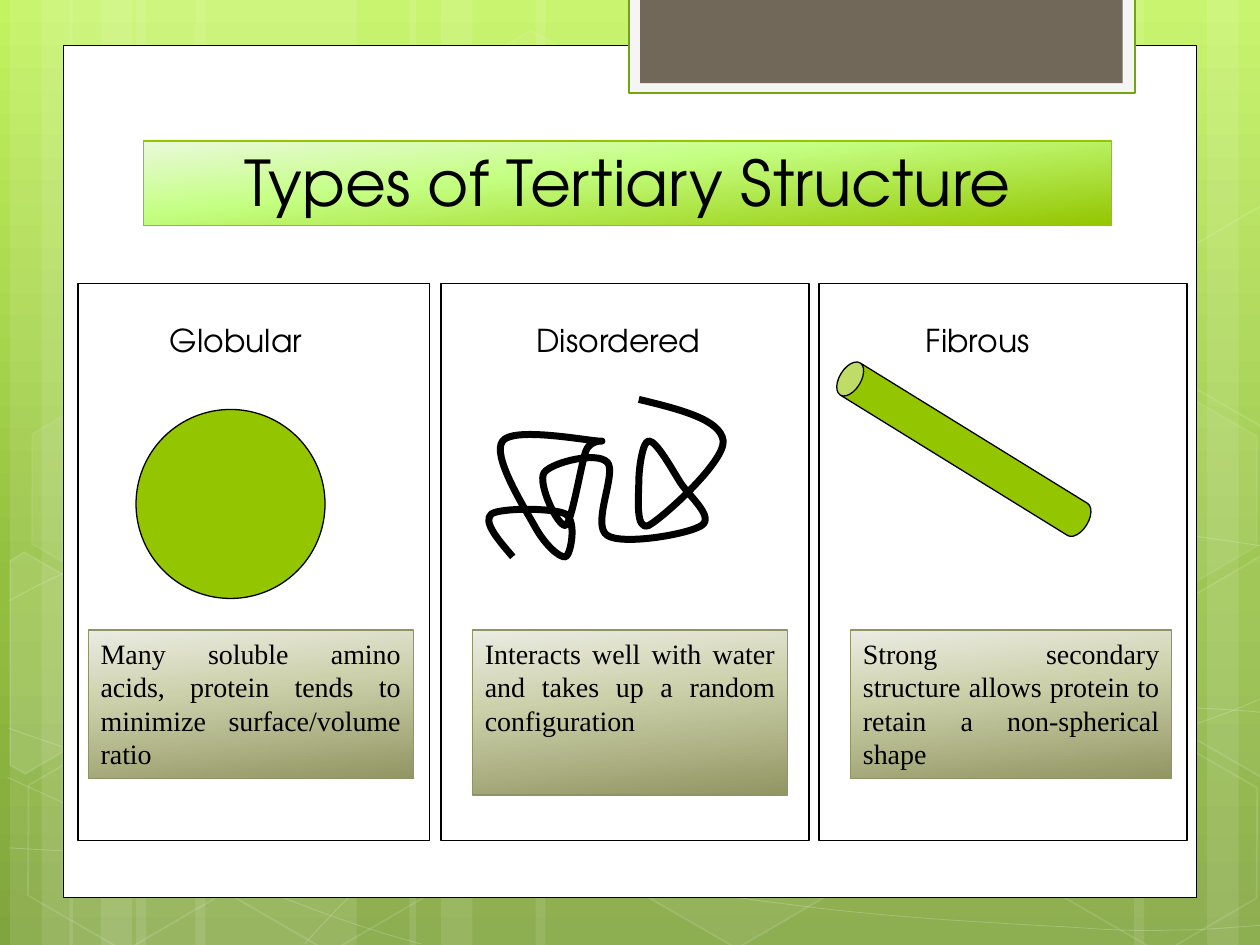
import math

import pptx
import pptx.util
from lxml import etree
from pptx.dml.color import RGBColor
from pptx.enum.shapes import MSO_SHAPE
from pptx.enum.text import MSO_ANCHOR, PP_ALIGN
from pptx.oxml.ns import qn
from pptx.util import Inches

COLORS = {
    "white": "FFFFFF", "black": "000000", "green": "94C600",
    "tab": "F5F5F5", "tab_line": "74A510", "tab_fill": "71685A",
    "note_line": "909465",
}
BACKDROP = [(0, "C3F35F"), (62, "93BF3F"), (100, "81A53E")]
TITLE_FILL = [(0, "EAF9DA"), (40, "C4FF82"), (100, "94C600")]
NOTE_FILL = [(0, "EBECE3"), (40, "CDD1AB"), (100, "929663")]
HEADING_FONT = "TeX Gyre Adventor"
NOTE_FONT = "Times New Roman"

STRIPES = [
    (1.08, 1.75, 0), (0.08, 0.5, 0), (0.33, 0.83, 0), (1.55, 1.75, 0), (0.55, 0.5, 0), (0.8, 0.83, 0),
    (7.33, 1.75, 180), (9.58, 0.5, 180), (9, 0.83, 180), (4.25, 3.08, 0), (3.25, 0.5, 0), (3.5, 0.83, 0),
]
WAVES = [
    [(0.07, 6.73), (0.61, 6.76), (1.15, 6.79), (1.9, 6.78), (2.65, 6.77), (3.58, 6.75),
     (4.58, 6.65), (5.58, 6.55), (7, 6.36), (7.92, 6.17), (8.83, 5.98), (9.77, 5.68), (10.07, 5.51)],
    [(0.07, 4.77), (0.36, 4.61), (0.65, 4.46), (1.21, 4.31), (1.78, 4.16), (2.59, 3.94),
     (3.47, 3.87), (4.36, 3.8), (5.44, 3.79), (6.54, 3.87), (7.64, 3.95), (9.47, 4.26), (10.07, 4.34)],
    [(0.06, 6.17), (1.27, 6.72), (2.47, 7.27), (3.34, 7.49)],
    [(0.07, 5.78), (0.38, 5.89), (0.7, 6), (1.28, 6.16), (1.86, 6.31), (2.73, 6.56),
     (3.57, 6.73), (4.4, 6.9), (5.45, 7.08), (6.28, 7.18), (7.11, 7.29), (8, 7.33),
     (8.53, 7.36), (9.05, 7.4), (9.19, 7.38), (9.45, 7.38), (9.71, 7.37), (9.89, 7.35), (10.07, 7.34)],
    [(2.42, 7.49), (2.6, 7.29), (2.78, 7.09), (3.02, 6.91), (3.26, 6.73), (3.6, 6.53),
     (3.88, 6.39), (4.16, 6.25), (4.33, 6.19), (4.7, 6.09), (5.06, 5.99), (5.73, 5.85),
     (6.08, 5.78), (6.44, 5.71), (6.49, 5.71), (6.8, 5.69), (7.11, 5.66), (7.6, 5.63),
     (7.94, 5.62), (8.29, 5.61), (8.86, 5.62), (8.86, 5.62), (8.86, 5.62), (9.53, 5.62),
     (9.53, 5.62), (9.71, 5.63), (9.88, 5.64), (9.97, 5.65), (10.06, 5.66), (10.03, 5.65), (10.06, 5.66)],
]
HEXAGONS = [
    (3.34, 0.36, 4, 8), (4.97, 5.89, 6, 12), (0.11, 5.91, None, 12),
    (0.14, 3.12, 7, 8), (1.74, 5.92, None, 12), (7.53, 4.53, 10, 12),
    (8.34, 5.93, None, 12), (8.34, 3.14, 7, 8),
]
CUT_HEXAGONS = [
    ((0.36, 5.35), 10,
     [(0.08, 4.45), (0.19, 4.38), (0.96, 4.82), (0.95, 5.7), (0.2, 6.14), (0.08, 6.07)]),
    ((9.85, 5.2), 4,
     [(9.26, 4.85), (10.01, 4.41), (10.09, 4.46), (10.09, 6.13), (10.02, 6.17), (9.26, 5.73)]),
    ((9.85, 2.41), None,
     [(9.26, 2.07), (10.01, 1.63), (10.1, 1.68), (10.09, 3.35), (10.02, 3.39), (9.26, 2.95)]),
]
COIL = [
    (4.07, 4.42), (3.95, 4.28), (3.83, 4.14), (3.9, 4.08), (3.97, 4.03), (4.39, 4.03),
    (4.49, 4.08), (4.58, 4.14), (4.53, 4.4), (4.49, 4.42), (4.44, 4.43), (4.32, 4.32),
    (4.24, 4.17), (4.15, 4.01), (3.9, 3.61), (3.99, 3.5), (4.07, 3.39), (4.62, 3.49),
    (4.74, 3.5), (4.85, 3.51), (4.69, 3.47), (4.65, 3.58), (4.61, 3.69), (4.54, 4.14),
    (4.49, 4.17), (4.43, 4.19), (4.26, 3.83), (4.32, 3.75), (4.38, 3.67), (4.74, 3.58),
    (4.82, 3.67), (4.9, 3.75), (4.69, 4.17), (4.82, 4.25), (4.94, 4.33), (5.47, 4.24),
    (5.57, 4.17), (5.67, 4.1), (5.47, 3.94), (5.4, 3.83), (5.33, 3.72), (5.21, 3.5),
    (5.15, 3.5), (5.1, 3.5), (5.07, 3.72), (5.07, 3.83), (5.07, 3.94), (5.04, 4.22),
    (5.15, 4.17), (5.26, 4.11), (5.75, 3.67), (5.74, 3.5), (5.72, 3.33), (5.4, 3.25), (5.07, 3.17),
]
PANELS = [
    ((0.62, 2.25, 2.79, 4.42), "Globular", (1.25, 2.5, 1.39, 0.5), (0.7, 5, 2.58, 1.18),
     "Many soluble amino acids, protein tends to minimize surface/volume ratio"),
    ((3.5, 2.25, 2.92, 4.42), "Disordered", (4.16, 2.5, 1.68, 0.5), (3.75, 5, 2.5, 1.31),
     "Interacts well with water and takes up a random configuration"),
    ((6.5, 2.25, 2.92, 4.42), "Fibrous", (7.25, 2.5, 1.22, 0.5), (6.75, 5, 2.55, 1.18),
     "Strong secondary structure allows protein to retain a non-spherical shape"),
]


def set_color(color, name, alpha, root):
    color.rgb = RGBColor.from_string(COLORS[name])
    if alpha is not None:
        clr = next(root.iter(qn("a:srgbClr")))
        etree.SubElement(clr, qn("a:alpha"), val=str(alpha * 1000))


def set_gradient(fill, root, stops, angle):
    fill.gradient()
    fill.gradient_angle = 360 - angle
    gs_list = next(root.iter(qn("a:gsLst")))
    gs_list.clear()
    for pos, color in stops:
        gs = etree.SubElement(gs_list, qn("a:gs"), pos=str(pos * 1000))
        etree.SubElement(gs, qn("a:srgbClr"), val=color)


def paint(sp, fill=None, line=None, width=0.75, fill_alpha=None, line_alpha=None):
    sp.shadow.inherit = False
    if isinstance(fill, list):
        set_gradient(sp.fill, sp.element.spPr, fill, 84)
    elif fill:
        sp.fill.solid()
        set_color(sp.fill.fore_color, fill, fill_alpha, sp.element.spPr)
    else:
        sp.fill.background()
    if line:
        sp.line.width = pptx.util.Pt(width)
        sp.line.fill.solid()
        set_color(sp.line.color, line, line_alpha, sp.element.spPr.find(qn("a:ln")))
    else:
        sp.line.fill.background()
    return sp


def add_preset(s, kind, box, **style):
    return paint(s.shapes.add_shape(kind, *map(Inches, box)), **style)


def add_outline(s, points, close=False, **style):
    pts = [(Inches(x), Inches(y)) for x, y in points]
    builder = s.shapes.build_freeform(*pts[0])
    builder.add_line_segments(pts[1:], close=close)
    return paint(builder.convert_to_shape(), **style)


def add_curve(s, points, **style):
    sp = add_outline(s, points, **style)
    outline = next(sp.element.iter(qn("a:path")))
    lines = outline.findall(qn("a:lnTo"))
    for i in range(0, len(lines), 3):
        cubic = etree.SubElement(outline, qn("a:cubicBezTo"))
        for ln in lines[i:i + 3]:
            cubic.append(ln[0])
            outline.remove(ln)


def turn(points, center, degrees):
    cx, cy = center
    cos, sin = math.cos(math.radians(degrees)), math.sin(math.radians(degrees))
    return [(cx + (x - cx) * cos - (y - cy) * sin, cy + (x - cx) * sin + (y - cy) * cos) for x, y in points]


def write(sp, text, size, font, align, anchor=MSO_ANCHOR.TOP):
    tf = sp.text_frame
    tf.word_wrap = True
    tf.vertical_anchor = anchor
    p = tf.paragraphs[0]
    p.text = text
    p.alignment = align
    p.font.size = pptx.util.Pt(size)
    p.font.name = font
    p.font.color.rgb = RGBColor.from_string(COLORS["black"])


def add_backdrop(s, height):
    set_gradient(s.background.fill, s.element, BACKDROP, 90)
    for left, width, rotation in STRIPES:
        sp = add_preset(s, MSO_SHAPE.RECTANGLE, (left, 0, width, height), fill="white", fill_alpha=10)
        sp.rotation = rotation
    for wave in WAVES:
        add_curve(s, wave, line="white", width=0.5, line_alpha=20)
    for left, top, fill_alpha, line_alpha in HEXAGONS:
        sp = add_preset(s, MSO_SHAPE.HEXAGON, (left, top, 1.75, 1.52), fill=fill_alpha and "white",
                        fill_alpha=fill_alpha, line="white", width=1, line_alpha=line_alpha)
        sp.adjustments[0] = 0.285
        sp.rotation = 30
    for center, fill_alpha, points in CUT_HEXAGONS:
        sp = add_outline(s, turn(points, center, -30), close=True, fill=fill_alpha and "white",
                         fill_alpha=fill_alpha, line="white", width=1, line_alpha=12)
        sp.rotation = 30


def add_frame(s, box):
    add_preset(s, MSO_SHAPE.RECTANGLE, box, fill="white", line="black", width=0.5)
    add_preset(s, MSO_SHAPE.RECTANGLE, (4.99, -0.02, 4.02, 0.76), fill="tab", line="tab_line", width=1.25)
    add_preset(s, MSO_SHAPE.RECTANGLE, (5.08, -0.02, 3.83, 0.68), fill="tab_fill")


def add_title(s, box):
    sp = add_preset(s, MSO_SHAPE.RECTANGLE, box, fill=TITLE_FILL, line="green")
    write(sp, "Types of Tertiary Structure", 36, HEADING_FONT, PP_ALIGN.CENTER, MSO_ANCHOR.BOTTOM)


def add_panel(s, box, heading, heading_box, note_box, note):
    add_preset(s, MSO_SHAPE.RECTANGLE, box, line="black")
    write(s.shapes.add_textbox(*map(Inches, heading_box)), heading, 18, HEADING_FONT, PP_ALIGN.LEFT)
    sp = add_preset(s, MSO_SHAPE.RECTANGLE, note_box, fill=NOTE_FILL, line="note_line")
    write(sp, note, 16, NOTE_FONT, PP_ALIGN.JUSTIFY)


def add_proteins(s):
    rod = add_preset(s, MSO_SHAPE.CAN, (7.5, 2.42, 0.3, 2.29), fill="green", line="black")
    rod.adjustments[0] = 0.565
    rod.rotation = 301.7
    add_preset(s, MSO_SHAPE.OVAL, (1.08, 3.25, 1.5, 1.5), fill="green", line="black")
    add_curve(s, COIL, line="black", width=4)


def main():
    prs = pptx.Presentation()
    prs.slide_width, prs.slide_height = Inches(10), Inches(7.5)
    s = prs.slides.add_slide(prs.slide_layouts[6])
    add_backdrop(s, 7.5)
    add_frame(s, (0.5, 0.36, 9, 6.76))
    add_title(s, (1.14, 1.12, 7.68, 0.67))
    for panel in PANELS:
        add_panel(s, *panel)
    add_proteins(s)
    prs.save("out.pptx")


if __name__ == "__main__":
    main()
